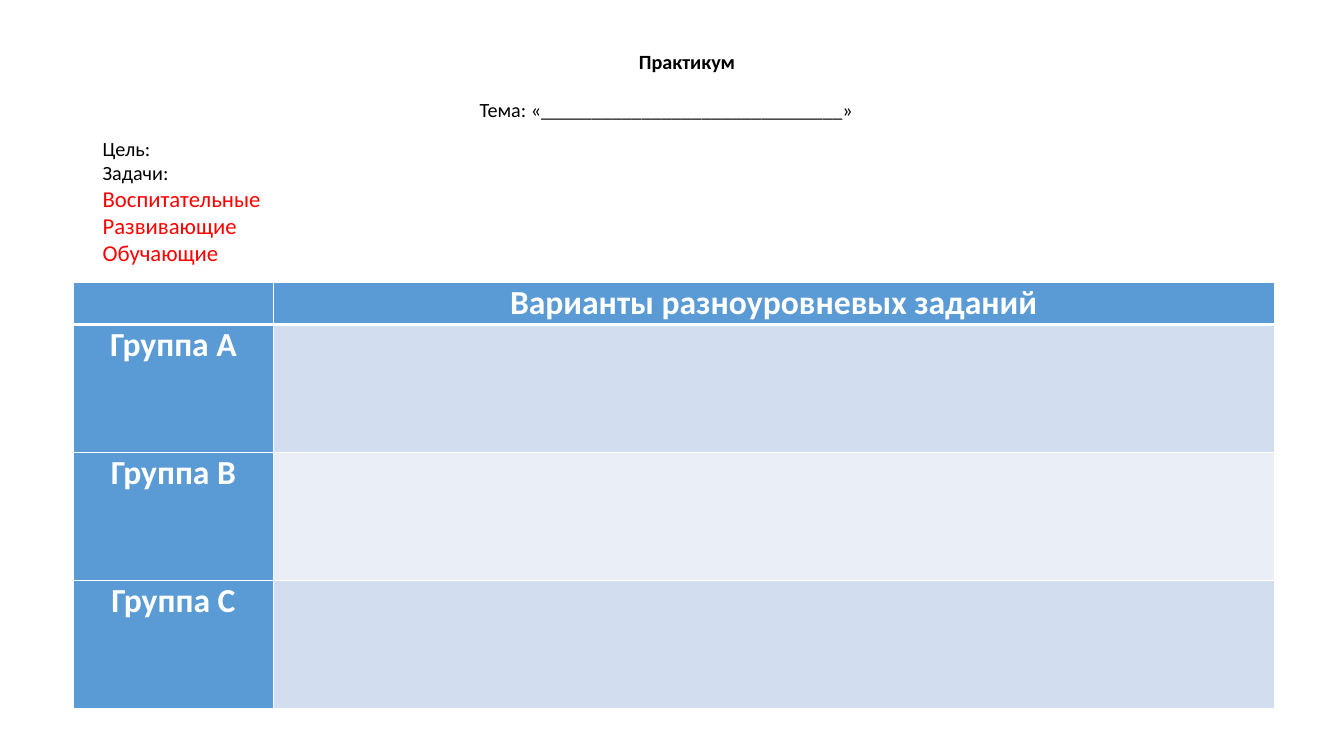
"""Build the practicum worksheet slide: a heading, its aims and a table of graded tasks."""
from dataclasses import dataclass

from lxml.etree import SubElement
from pptx import Presentation
from pptx.dml.color import RGBColor
from pptx.enum.text import MSO_ANCHOR, PP_ALIGN
from pptx.oxml.ns import qn
from pptx.slide import Slide
from pptx.table import _Cell
from pptx.text.text import _Paragraph
from pptx.util import Emu, Inches, Pt


@dataclass(frozen=True)
class Theme:
    font: str = "Calibri"
    ink: str = "000000"
    accent: str = "FF0000"
    white: str = "FFFFFF"
    header: str = "5B9BD5"
    bands: tuple[str, str] = ("D2DEEF", "EAEFF7")
    body_size: float = 14.4
    task_size: float = 16.2
    table_size: float = 24
    body_pitch: float = 17.1
    task_pitch: float = 19.3
    thin: float = 1
    thick: float = 3


@dataclass(frozen=True)
class Line:
    wording: str
    size: float
    pitch: float
    color: str
    indent: float = 0
    gap: float = 0
    bold: bool = False


THEME = Theme()
WIDTH, HEIGHT = Inches(13.33), Inches(7.5)
BODY = (THEME.body_size, THEME.body_pitch, THEME.ink)
TASK = (THEME.task_size, THEME.task_pitch, THEME.accent)
INTRO = [
    Line("Практикум", *BODY, indent=39.9, bold=True),
    Line("Тема: «" + "_" * 30 + "»", *BODY, indent=28.05, gap=17.1),
    Line("Цель:", *BODY, gap=11.4),
    Line("Задачи:", *BODY),
    *(Line(task, *TASK) for task in ("Воспитательные", "Развивающие", "Обучающие")),
]
TASK_ROWS = [
    ("", "Варианты разноуровневых заданий"),
    *((f"Группа {letter}", "") for letter in "АВС"),
]
COLUMN_SHARES = (14.85, 74.49)
ROW_SHARES = (5.6, 16.93, 16.93, 16.93)


def across(share: float) -> Emu:
    """Turn a percentage of the slide's width into a length."""
    return Emu(round(WIDTH * share / 100))


def down(share: float) -> Emu:
    """Turn a percentage of the slide's height into a length."""
    return Emu(round(HEIGHT * share / 100))


def apply(target: object, formats: dict[str, object]) -> None:
    """Set each named attribute on the target."""
    for attribute, value in formats.items():
        setattr(target, attribute, value)


def write(paragraph: _Paragraph, wording: str, size: float, color: str, bold: bool) -> None:
    """Add one formatted run to a paragraph."""
    run = paragraph.add_run()
    run.text = wording
    apply(run.font, {"name": THEME.font, "size": Pt(size), "bold": bold})
    run.font.color.rgb = RGBColor.from_string(color)


def draw_intro(slide: Slide) -> None:
    """Place the heading, topic, aim and tasks."""
    intro = slide.shapes.add_textbox(across(6.9), down(5.33), across(86.27), down(34.53)).text_frame
    apply(intro, {"word_wrap": True, "vertical_anchor": MSO_ANCHOR.TOP, "margin_top": down(1.2)})
    for number, line in enumerate(INTRO):
        paragraph = intro.add_paragraph() if number else intro.paragraphs[0]
        apply(paragraph, {"line_spacing": Pt(line.pitch), "space_before": Pt(line.gap)})
        paragraph._p.get_or_add_pPr().set("marL", str(across(line.indent)))
        write(paragraph, line.wording, line.size, line.color, line.bold)


def draw_borders(cell: _Cell, top: float, bottom: float) -> None:
    """Give a cell white edges of the stated widths."""
    properties = cell._tc.get_or_add_tcPr()
    widths = {"a:lnL": THEME.thin, "a:lnR": THEME.thin, "a:lnT": top, "a:lnB": bottom}
    for position, (edge, width) in enumerate(widths.items()):
        border = SubElement(properties, qn(edge), w=str(Pt(width)))
        solid = SubElement(border, qn("a:solidFill"))
        SubElement(solid, qn("a:srgbClr"), val=THEME.white)
        properties.insert(position, border)


def draw_tasks(slide: Slide) -> None:
    """Place the table of task variants by group."""
    tasks = slide.shapes.add_table(
        len(ROW_SHARES), len(COLUMN_SHARES), across(5.48), down(37.33),
        across(sum(COLUMN_SHARES)), down(sum(ROW_SHARES)),
    ).table
    for column, share in zip(tasks.columns, COLUMN_SHARES):
        column.width = across(share)
    for row, share in zip(tasks.rows, ROW_SHARES):
        row.height = down(share)
    margins = {"margin_left": Inches(0.07), "margin_right": Inches(0.07),
               "margin_top": 0, "margin_bottom": 0}
    for row, wordings in enumerate(TASK_ROWS):
        for column, wording in enumerate(wordings):
            cell = tasks.cell(row, column)
            apply(cell, margins)
            heading = row == 0 or column == 0
            cell.fill.solid()
            cell.fill.fore_color.rgb = RGBColor.from_string(
                THEME.header if heading else THEME.bands[(row - 1) % 2])
            draw_borders(cell, THEME.thick if row == 1 else THEME.thin,
                         THEME.thick if row == 0 else THEME.thin)
            if wording:
                paragraph = cell.text_frame.paragraphs[0]
                paragraph.alignment = PP_ALIGN.CENTER
                write(paragraph, wording, THEME.table_size, THEME.white, True)


def main() -> None:
    """Build and save the slide."""
    deck = Presentation()
    apply(deck, {"slide_width": WIDTH, "slide_height": HEIGHT})
    slide = deck.slides.add_slide(deck.slide_layouts[6])
    draw_intro(slide)
    draw_tasks(slide)
    deck.save("out.pptx")


if __name__ == "__main__":
    main()
